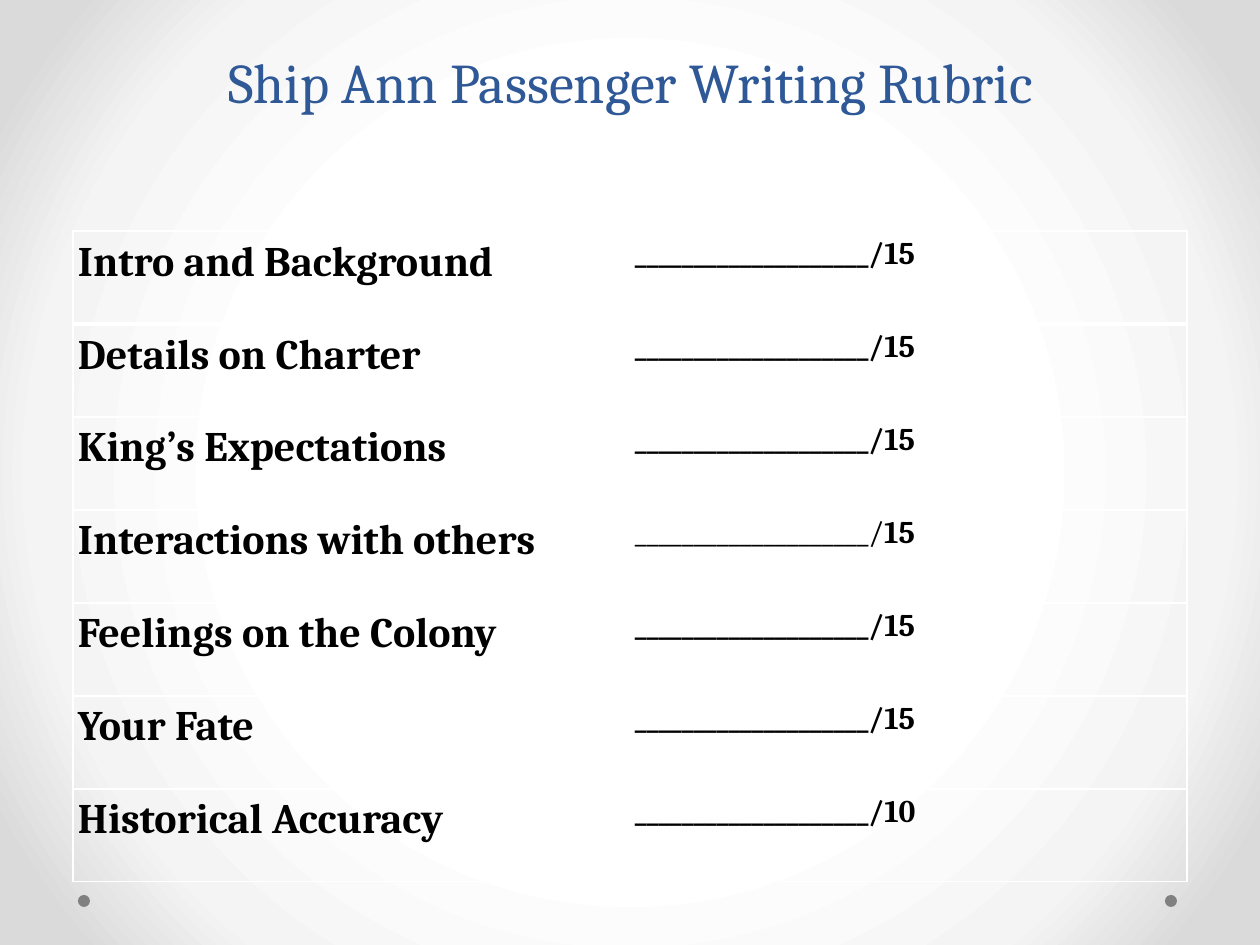
import dataclasses

import lxml.etree
import pptx
import pptx.dml.color
import pptx.enum.shapes
import pptx.enum.text
import pptx.oxml.ns
import pptx.util

EMU_PER_PX = 914400 / 126
SLIDE_SIZE = (1260, 945)
BLANK = "_" * 20
RUBRIC = [
    ("Intro and Background", [(BLANK + "/15", True)]),
    ("Details on Charter", [(BLANK + "/15", True)]),
    ("King’s Expectations", [(BLANK + "/15", True)]),
    ("Interactions with others", [(BLANK + "/", False), ("15", True)]),
    ("Feelings on the Colony", [(BLANK + "/15", True)]),
    ("Your Fate", [(BLANK + "/15", True)]),
    ("Historical Accuracy", [(BLANK + "/10", True)]),
]


@dataclasses.dataclass(frozen=True)
class Theme:
    font: str = "Cambria"
    title: str = "2F5897"
    body: str = "000000"
    border: str = "FFFFFF"
    dot: str = "808080"
    backdrop: tuple = ((50, "FFFFFF"), (76, "F4F4F4"), (92, "DADADA"))
    title_size: int = 32
    title_leading: int = 58
    label_size: int = 24
    score_size: int = 18
    line_spacing: float = 1.15
    thin: int = 1
    thick: int = 3


def px(length):
    return pptx.util.Emu(round(length * EMU_PER_PX))


def rgb(color):
    return pptx.dml.color.RGBColor.from_string(color)


def add_element(parent, tag, **attributes):
    return lxml.etree.SubElement(parent, pptx.oxml.ns.qn(tag), attributes)


class SlideBuilder:
    def __init__(self, slide, theme):
        self.slide = slide
        self.theme = theme

    def style_run(self, run, size, color, bold=False):
        run.font.name = self.theme.font
        run.font.size = pptx.util.Pt(size)
        run.font.bold = bold
        run.font.color.rgb = rgb(color)

    def background(self):
        self.slide.background.fill.gradient()
        gradient = self.slide.element.find(".//" + pptx.oxml.ns.qn("a:gradFill"))
        for child in list(gradient):
            gradient.remove(child)
        stops = add_element(gradient, "a:gsLst")
        for position, color in self.theme.backdrop:
            stop = add_element(stops, "a:gs", pos=str(position * 1000))
            add_element(stop, "a:srgbClr", val=color)
        path = add_element(gradient, "a:path", path="circle")
        add_element(path, "a:fillToRect", l="50000", t="50000", r="50000", b="50000")

    def dot(self, left, top, diameter):
        shape = self.slide.shapes.add_shape(
            pptx.enum.shapes.MSO_SHAPE.OVAL, px(left), px(top), px(diameter), px(diameter))
        shape.shadow.inherit = False
        shape.fill.solid()
        shape.fill.fore_color.rgb = rgb(self.theme.dot)
        shape.line.fill.background()

    def title(self, text, left, top, width, height):
        shape = self.slide.shapes.add_textbox(px(left), px(top), px(width), px(height))
        text_frame = shape.text_frame
        text_frame.word_wrap = True
        text_frame.vertical_anchor = pptx.enum.text.MSO_ANCHOR.BOTTOM
        text_frame.text = text
        paragraph = text_frame.paragraphs[0]
        paragraph.alignment = pptx.enum.text.PP_ALIGN.CENTER
        paragraph.line_spacing = pptx.util.Pt(self.theme.title_leading)
        self.style_run(paragraph.runs[0], self.theme.title_size, self.theme.title)

    def cell(self, cell, parts, size, top_border, bottom_border):
        cell.margin_left = cell.margin_right = px(5)
        cell.margin_top = cell.margin_bottom = 0
        paragraph = cell.text_frame.paragraphs[0]
        paragraph.line_spacing = self.theme.line_spacing
        for text, bold in parts:
            run = paragraph.add_run()
            run.text = text
            self.style_run(run, size, self.theme.body, bold)
        properties = cell._tc.get_or_add_tcPr()
        borders = {"a:lnL": self.theme.thin, "a:lnR": self.theme.thin,
                   "a:lnT": top_border, "a:lnB": bottom_border}
        for tag, weight in borders.items():
            line = add_element(properties, tag, w=str(pptx.util.Pt(weight)))
            fill = add_element(line, "a:solidFill")
            add_element(fill, "a:srgbClr", val=self.theme.border)
        cell.fill.background()

    def rubric(self, entries, left, top, column_width, row_height):
        table = self.slide.shapes.add_table(
            len(entries), 2, px(left), px(top),
            px(2 * column_width), px(len(entries) * row_height)).table
        table.first_row = False
        table.horz_banding = False
        for column in table.columns:
            column.width = px(column_width)
        for index, (label, score) in enumerate(entries):
            table.rows[index].height = px(row_height)
            top_border = self.theme.thick if index == 1 else self.theme.thin
            bottom_border = self.theme.thick if index == 0 else self.theme.thin
            contents = [([(label, True)], self.theme.label_size),
                        (score, self.theme.score_size)]
            for column, (parts, size) in enumerate(contents):
                self.cell(table.cell(index, column), parts, size, top_border, bottom_border)


def main():
    presentation = pptx.Presentation()
    presentation.slide_width, presentation.slide_height = map(px, SLIDE_SIZE)
    slide = presentation.slides.add_slide(presentation.slide_layouts[6])
    builder = SlideBuilder(slide, Theme())
    builder.background()
    for left in (1165, 78):
        builder.dot(left, 895, 12)
    builder.title("Ship Ann Passenger Writing Rubric", 147, 42, 968, 79)
    builder.rubric(RUBRIC, 73, 231, 557, 93)
    presentation.save("out.pptx")


if __name__ == "__main__":
    main()
